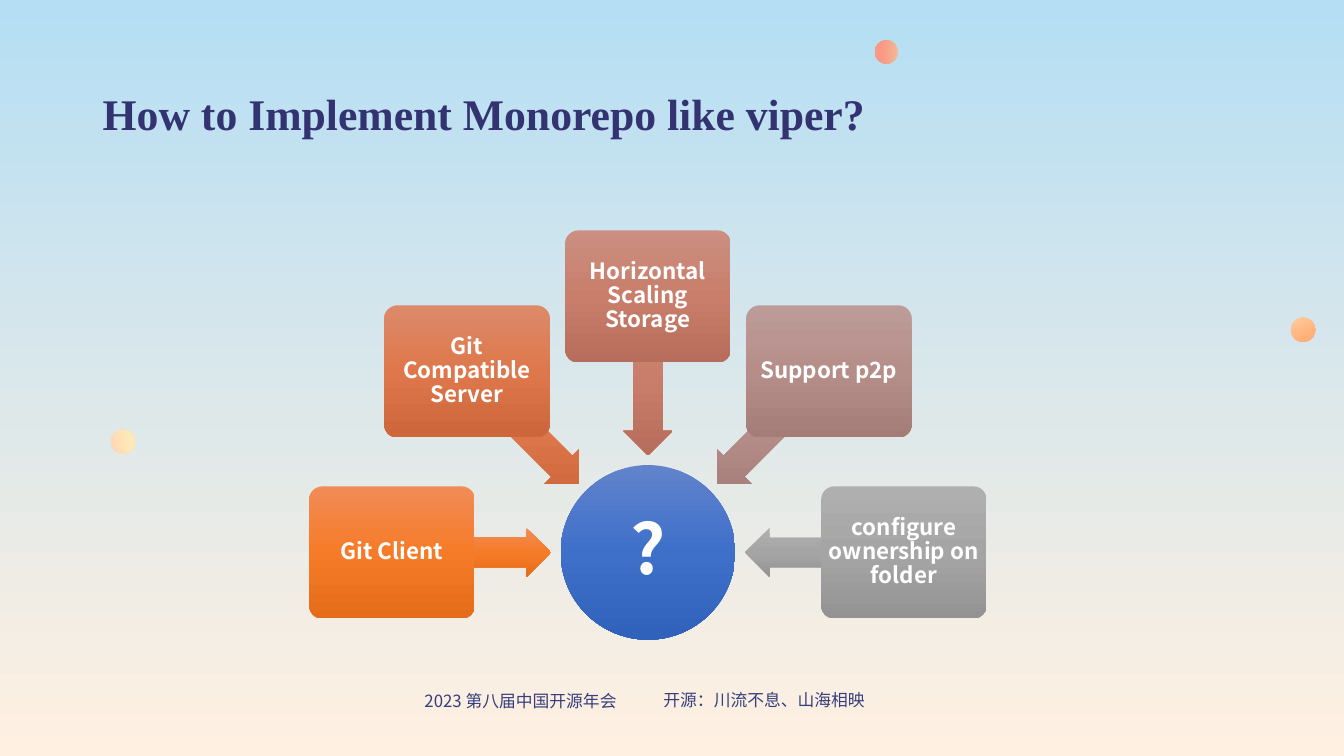
from copy import deepcopy
from dataclasses import dataclass
from math import cos, radians, sin

from lxml.etree import SubElement
from pptx import Presentation
from pptx.dml.color import RGBColor
from pptx.enum.shapes import MSO_SHAPE
from pptx.enum.text import MSO_ANCHOR, PP_ALIGN
from pptx.oxml.ns import qn
from pptx.util import Cm, Pt

COLOURS = {"title": "333372", "footer": "363E7D", "label": "FFFFFF"}
GRADIENTS = {
    "sky": {0: "B5DEF4", 100: "FFF0E1"},
    "orange dot": {0: "FFD3A7", 71: "FFAF78"},
    "pink dot": {0: "F1B994", 71: "FA9986"},
    "yellow dot": {0: "FFD3B4", 71: "FFE8B7"},
    "hub": {0: "6183CB", 50: "3E70CA", 100: "3062BB"},
    "orange": {0: "F18C57", 50: "F67B28", 100: "E56C19"},
    "rust": {0: "DD8A6A", 50: "DE774B", 100: "CD673B"},
    "brick": {0: "CB8F81", 50: "C97E6B", 100: "B76D5B"},
    "mauve": {0: "BC9C99", 50: "B68E89", 100: "A47C78"},
    "grey": {0: "AFAFAF", 50: "A5A5A5", 100: "939393"},
}
SANS = "Noto Sans CJK SC"
SERIF = "Times New Roman"
SPOKES = [
    ("Git Client", "orange"),
    ("Git Compatible Server", "rust"),
    ("Horizontal Scaling Storage", "brick"),
    ("Support p2p", "mauve"),
    ("configure ownership on folder", "grey"),
]


@dataclass
class Box:
    """A rectangle in centimetres."""
    left: float
    top: float
    width: float
    height: float

    def lengths(self):
        return [Cm(value) for value in (self.left, self.top, self.width, self.height)]


def centred(x, y, width, height):
    return Box(x - width / 2, y - height / 2, width, height)


def paint(fill, element, gradient):
    """Fill with a top-to-bottom gradient; element is the XML that holds the fill."""
    fill.gradient()
    fill.gradient_angle = 270
    stop_list = next(element.iter(qn("a:gsLst")))
    for _ in range(len(gradient) - len(stop_list)):
        stop_list.append(deepcopy(stop_list[-1]))
    for stop, (percent, colour) in zip(fill.gradient_stops, gradient.items()):
        stop.position = percent / 100
        stop.color.rgb = RGBColor.from_string(colour)


def add_figure(slide, kind, box, gradient, rotation=0, adjustments=()):
    shape = slide.shapes.add_shape(kind, *box.lengths())
    shape.shadow.inherit = False
    shape.line.fill.background()
    shape.rotation = rotation
    for index, value in enumerate(adjustments):
        shape.adjustments[index] = value
    paint(shape.fill, shape._element, GRADIENTS[gradient])
    return shape


def write(shape, text, size, colour, font=SANS, bold=False,
          align=PP_ALIGN.CENTER, anchor=MSO_ANCHOR.MIDDLE):
    frame = shape.text_frame
    frame.word_wrap = True
    frame.vertical_anchor = anchor
    para = frame.paragraphs[0]
    para.alignment = align
    span = para.add_run()
    span.text = text
    span.font.size = Pt(size)
    span.font.bold = bold
    span.font.name = font
    span.font.color.rgb = RGBColor.from_string(COLOURS[colour])
    SubElement(span.font._element, qn("a:ea"), typeface=font)


def write_label(shape, text, size):
    write(shape, text, size, "label", bold=True)
    frame = shape.text_frame
    frame.margin_left = frame.margin_right = Cm(0.08)
    frame.margin_top = frame.margin_bottom = Cm(0.08)
    frame.paragraphs[0].line_spacing = 0.9


def add_backdrop(slide, page):
    paint(slide.background.fill, slide._element, GRADIENTS["sky"])
    dots = [
        (32.84, 8.31, 0.61, 331, "orange dot"),
        (22.34, 1.31, 0.59, 90, "pink dot"),
        (3.1, 11.13, 0.61, 255, "yellow dot"),
    ]
    for x, y, size, rotation, gradient in dots:
        box = centred(page.left + x, page.top + y, size, size)
        add_figure(slide, MSO_SHAPE.OVAL, box, gradient, rotation)


def add_title(slide, box):
    title = slide.shapes.add_textbox(*box.lengths())
    write(title, "How to Implement Monorepo like viper?", 31.2, "title",
          font=SERIF, bold=True, align=PP_ALIGN.LEFT)


def add_footer(slide, box):
    parts = [
        ("2023 第八届中国开源年会", 0, 0.02, 6.98),
        ("开源：川流不息、山海相映", 6.57, 0, 6.12),
    ]
    for text, left, top, width in parts:
        part = Box(box.left + left, box.top + top, width, 0.76)
        write(slide.shapes.add_textbox(*part.lengths()), text, 12, "footer",
              anchor=MSO_ANCHOR.TOP)


def add_radial_diagram(slide, box):
    """Cards on a half circle, each with an arrow towards the hub."""
    hub_size, card_width, card_height = 4.4, 4.17, 3.33
    hub_x = box.left + box.width / 2
    hub_y = box.top + box.height - hub_size / 2
    card_radius, arrow_radius = 6.45, 4.45

    hub = add_figure(slide, MSO_SHAPE.OVAL,
                     centred(hub_x, hub_y, hub_size, hub_size), "hub")
    write_label(hub, "?", 49)

    step = 180 / (len(SPOKES) - 1)
    for index, (text, gradient) in enumerate(SPOKES):
        angle = 180 - index * step
        across, up = cos(radians(angle)), sin(radians(angle))

        arrow_box = centred(hub_x + arrow_radius * across,
                            hub_y - arrow_radius * up, 4.01, 1.24)
        arrow = add_figure(slide, MSO_SHAPE.LEFT_ARROW, arrow_box, gradient,
                           -angle % 360, (0.6, 0.5))
        next(arrow._element.iter(qn("a:gradFill"))).set("rotWithShape", "0")

        card_box = centred(hub_x + card_radius * across,
                           hub_y - card_radius * up, card_width, card_height)
        card = add_figure(slide, MSO_SHAPE.ROUNDED_RECTANGLE, card_box, gradient,
                          adjustments=(0.1,))
        write_label(card, text, 16)


def main():
    deck = Presentation()
    page = Box(0, 0, 33.87, 19.05)
    deck.slide_width, deck.slide_height = Cm(page.width), Cm(page.height)
    slide = deck.slides.add_slide(deck.slide_layouts[6])
    add_backdrop(slide, page)
    add_footer(slide, Box(9.63, 17.25, 12.69, 0.78))
    add_title(slide, Box(2.34, 1.02, 29.21, 3.68))
    add_radial_diagram(slide, Box(7.8, 5.8, 17.06, 10.32))
    deck.save("out.pptx")


if __name__ == "__main__":
    main()
